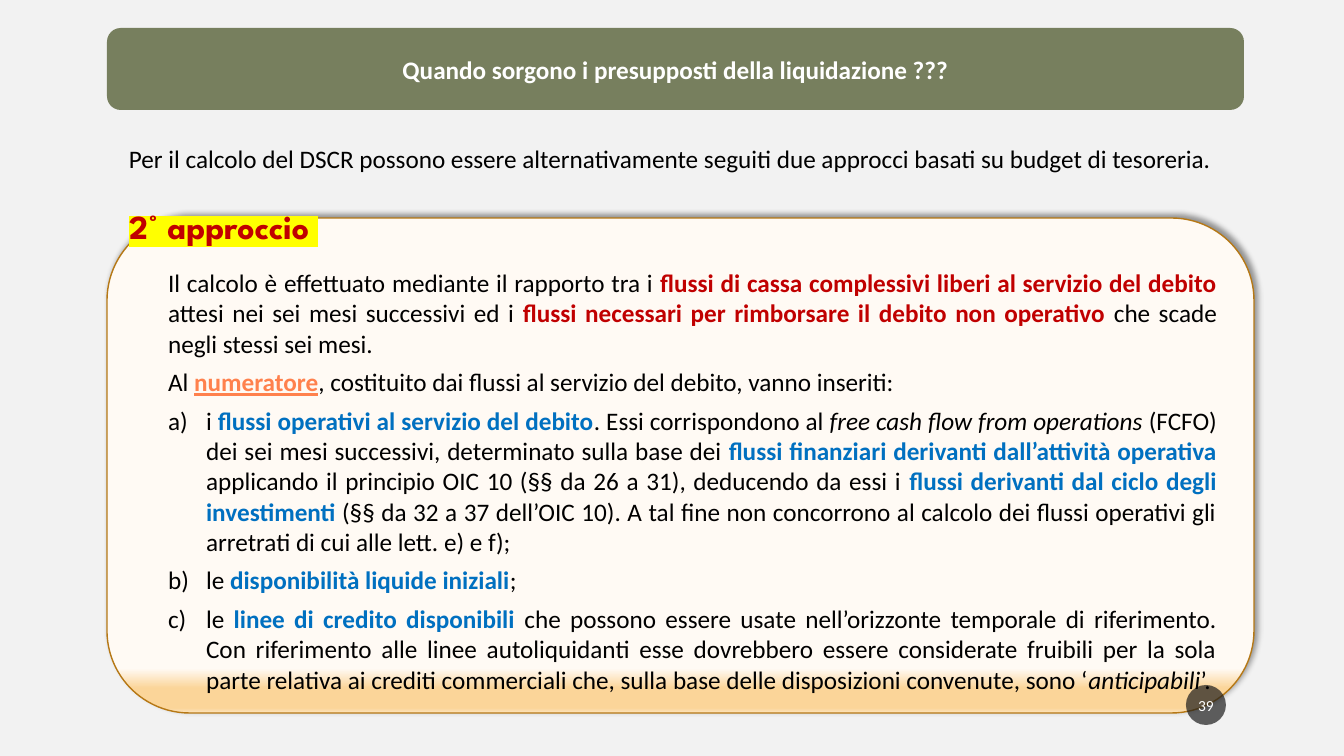
"""Build the slide on the second approach to computing the DSCR."""
from lxml import etree
from pptx import Presentation
from pptx.dml.color import RGBColor
from pptx.enum.shapes import MSO_SHAPE
from pptx.enum.text import MSO_ANCHOR, MSO_AUTO_SIZE, PP_ALIGN
from pptx.oxml.ns import nsdecls, qn
from pptx.util import Pt

ROUNDED, OVAL = MSO_SHAPE.ROUNDED_RECTANGLE, MSO_SHAPE.OVAL
MIDDLE, TOP = MSO_ANCHOR.MIDDLE, MSO_ANCHOR.TOP
CENTER, JUSTIFY, LEFT = PP_ALIGN.CENTER, PP_ALIGN.JUSTIFY, PP_ALIGN.LEFT
NO_AUTOFIT = MSO_AUTO_SIZE.NONE

PX = 914400 / 100.8
COLORS = {
    "background": "F2F2F2", "bar": "777F5E", "badge": "1D1D1D",
    "border": "B67815", "cream": "FFFAF4", "orange": "FBD599",
    "peach": "FCE3BB", "highlight": "FFFF00", "white": "FFFFFF",
    "black": "000000", "red": "C00000", "blue": "0070C0", "coral": "FF814D",
}
BODY_FONT, HEADING_FONT = "Calibri", "League Spartan"


def box(*lengths):
    return [round(length * PX) for length in lengths]


def style_run(run, color, size=18, bold=False, name=BODY_FONT):
    run.font.size = Pt(size)
    run.font.bold = bold
    run.font.name = name
    run.font.color.rgb = RGBColor.from_string(COLORS[color])


presentation = Presentation()
presentation.slide_width, presentation.slide_height = box(1344, 756)
slide = presentation.slides.add_slide(presentation.slide_layouts[1])
slide.background.fill.solid()
slide.background.fill.fore_color.rgb = RGBColor.from_string(COLORS["background"])
title, body = slide.placeholders

panel = slide.shapes.add_shape(ROUNDED, *box(107, 218, 1147, 495))
panel.line.color.rgb = RGBColor.from_string(COLORS["border"])
panel.line.width = Pt(1)
stops = "".join(
    f'<a:gs pos="{percent * 1000}"><a:srgbClr val="{COLORS[color]}"/></a:gs>'
    for percent, color in [(91, "cream"), (95, "orange"), (99, "orange"), (100, "peach")]
)
gradient = etree.fromstring(
    f'<a:gradFill {nsdecls("a")} rotWithShape="1"><a:gsLst>{stops}</a:gsLst>'
    '<a:lin ang="5400000" scaled="0"/></a:gradFill>'
)
shadow = etree.fromstring(
    f'<a:effectLst {nsdecls("a")}><a:outerShdw blurRad="{Pt(4)}" dist="{Pt(3)}" '
    f'dir="18900000" algn="bl" rotWithShape="0"><a:srgbClr val="{COLORS["black"]}">'
    '<a:alpha val="40000"/></a:srgbClr></a:outerShdw></a:effectLst>'
)
panel_properties = panel._element.spPr
panel_properties.find(qn("a:prstGeom")).addnext(gradient)
panel_properties.append(shadow)

badge = slide.shapes.add_shape(OVAL, *box(1186, 685, 40, 40))
title_bar = slide.shapes.add_shape(ROUNDED, *box(107, 28, 1137, 82))
for shape, color in [(badge, "badge"), (title_bar, "bar")]:
    shape.shadow.inherit = False
    shape.fill.solid()
    shape.fill.fore_color.rgb = RGBColor.from_string(COLORS[color])
    shape.line.fill.background()
badge_color = badge._element.spPr.find(qn("a:solidFill"))[0]
etree.SubElement(badge_color, qn("a:alpha"), val="70000")

intro = slide.shapes.add_textbox(*box(119, 138, 1126, 40))
title.left, title.top, title.width, title.height = box(107, 28, 1137, 82)
body.left, body.top, body.width, body.height = box(119, 201, 1108, 491)
badge.text_frame.margin_left = badge.text_frame.margin_right = round(2 * PX)

for shape, text, size, color, bold, alignment, anchor in [
    (title, "Quando sorgono i presupposti della liquidazione ???", 18, "white", True, CENTER, MIDDLE),
    (intro, "Per il calcolo del DSCR possono essere alternativamente seguiti due approcci "
            "basati su budget di tesoreria.", 18, "black", False, LEFT, TOP),
    (badge, "39", 11, "white", False, CENTER, MIDDLE),
]:
    frame = shape.text_frame
    frame.text = text
    frame.word_wrap = True
    frame.auto_size = NO_AUTOFIT
    frame.vertical_anchor = anchor
    frame.paragraphs[0].alignment = alignment
    style_run(frame.paragraphs[0].runs[0], color, size, bold)

STYLES = {
    "plain": ("black", False), "italic": ("black", False),
    "red": ("red", True), "blue": ("blue", True), "underlined": ("coral", True),
}
INDENTS = {"text": (39, 0), "item": (77, -38)}
PARAGRAPHS = [
    ("text", 15, [
        ("Il calcolo è effettuato mediante il rapporto tra i ", "plain"),
        ("flussi di cassa complessivi liberi al servizio del debito ", "red"),
        ("attesi nei sei mesi successivi ed i ", "plain"),
        ("flussi necessari per rimborsare il debito non operativo ", "red"),
        ("che scade negli stessi sei mesi.", "plain"),
    ]),
    ("text", 6, [
        ("Al ", "plain"),
        ("numeratore", "underlined"),
        (", costituito dai flussi al servizio del debito, vanno inseriti:", "plain"),
    ]),
    ("item", 6, [
        ("i ", "plain"),
        ("flussi operativi al servizio del debito", "blue"),
        (". Essi corrispondono al ", "plain"),
        ("free cash flow from operations ", "italic"),
        ("(FCFO) dei sei mesi successivi, determinato sulla base dei ", "plain"),
        ("flussi finanziari derivanti dall’attività operativa ", "blue"),
        ("applicando il principio OIC 10 (§§ da 26 a 31), deducendo da essi i ", "plain"),
        ("flussi derivanti dal ciclo degli investimenti ", "blue"),
        ("(§§ da 32 a 37 dell’OIC 10). A tal fine non concorrono al calcolo dei flussi "
         "operativi gli arretrati di cui alle lett. e) e f);", "plain"),
    ]),
    ("item", 6, [
        ("le ", "plain"),
        ("disponibilità liquide iniziali", "blue"),
        (";", "plain"),
    ]),
    ("item", 6, [
        ("le ", "plain"),
        ("linee di credito disponibili ", "blue"),
        ("che possono essere usate nell’orizzonte temporale di riferimento. Con riferimento "
         "alle linee autoliquidanti esse dovrebbero essere considerate fruibili per la sola "
         "parte relativa ai crediti commerciali che, sulla base delle disposizioni "
         "convenute, sono ‘", "plain"),
        ("anticipabili", "italic"),
        ("’.", "plain"),
    ]),
]

body_frame = body.text_frame
body_frame.text = "2° approccio "
body_frame.word_wrap = True
body_frame.auto_size = NO_AUTOFIT
body_frame.vertical_anchor = TOP
heading = body_frame.paragraphs[0]
heading.alignment = JUSTIFY
heading.space_before = Pt(0)
heading_properties = heading._p.get_or_add_pPr()
heading_properties.set("marL", "0")
heading_properties.set("indent", "0")
etree.SubElement(heading_properties, qn("a:buNone"))
heading_run = heading.runs[0]
style_run(heading_run, "red", 24, True, HEADING_FONT)
highlight = etree.fromstring(
    f'<a:highlight {nsdecls("a")}><a:srgbClr val="{COLORS["highlight"]}"/></a:highlight>'
)
heading_run._r.rPr.find(qn("a:solidFill")).addnext(highlight)

for kind, space_before, pieces in PARAGRAPHS:
    paragraph = body_frame.add_paragraph()
    paragraph.alignment = JUSTIFY
    paragraph.space_before = Pt(space_before)
    properties = paragraph._p.get_or_add_pPr()
    margin, indent = box(*INDENTS[kind])
    properties.set("marL", str(margin))
    properties.set("indent", str(indent))
    if kind == "item":
        etree.SubElement(properties, qn("a:buFont"), typeface=BODY_FONT)
        etree.SubElement(properties, qn("a:buAutoNum"), type="alphaLcParenR")
    else:
        etree.SubElement(properties, qn("a:buNone"))
    for text, style in pieces:
        run = paragraph.add_run()
        run.text = text
        color, bold = STYLES[style]
        style_run(run, color, bold=bold)
        run.font.italic = style == "italic"
        run.font.underline = style == "underlined"

for shape in (panel, badge, title_bar, title, intro, body):
    slide.shapes._spTree.append(shape._element)

presentation.save("out.pptx")
